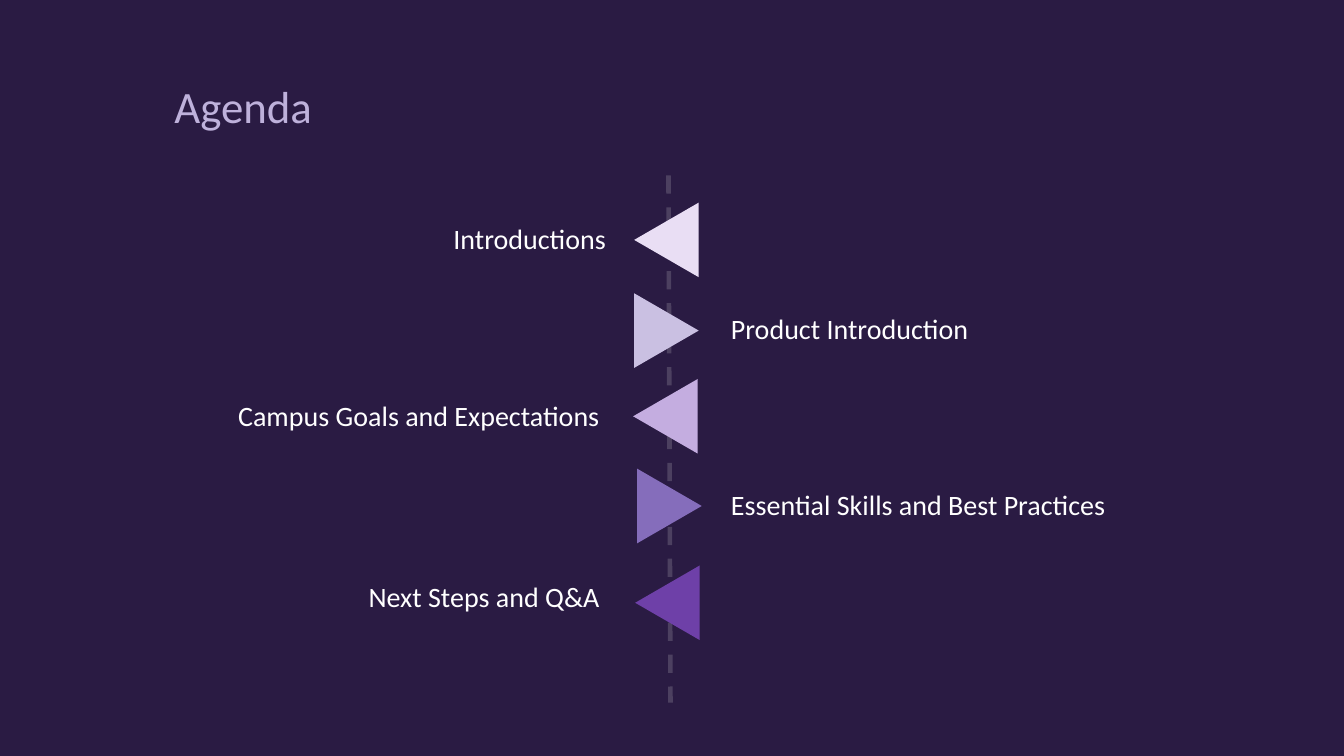
from lxml.etree import SubElement
from pptx import Presentation
from pptx.dml.color import RGBColor
from pptx.enum.dml import MSO_LINE
from pptx.enum.shapes import MSO_CONNECTOR, MSO_SHAPE
from pptx.enum.text import MSO_ANCHOR, MSO_AUTO_SIZE, PP_ALIGN
from pptx.oxml.ns import qn
from pptx.util import Inches, Pt

BACKGROUND = RGBColor(0x2A, 0x1B, 0x43)
LILAC = RGBColor(0xBE, 0xB1, 0xDB)
WHITE = RGBColor(0xFF, 0xFF, 0xFF)
GREY = RGBColor(0xD8, 0xD8, 0xD8)

TITLE_FORMAT = {"name": "Calibri", "size": Pt(32), "bold": False}
LABEL_FORMAT = {"name": "Calibri", "size": Pt(20), "bold": False}

LEFT_EDGE, RIGHT_EDGE = 6.01, 7.25  # inner edges of the two label columns
LABEL_H = 0.85
MARKER_W, MARKER_H = 0.74, 0.64

# Label, its top and width, marker left and top, marker colour
AGENDA = [
    ("Introductions", 1.96, 3.79, 6.24, 2.06, RGBColor(0xE9, 0xDE, 0xF4)),
    ("Product Introduction", 2.85, 4.67, 6.24, 2.96, RGBColor(0xCA, 0xC0, 0xE2)),
    ("Campus Goals and Expectations ", 3.72, 4.93, 6.23, 3.81, RGBColor(0xC4, 0xAD, 0xE0)),
    ("Essential Skills and Best Practices", 4.6, 4.35, 6.27, 4.7, RGBColor(0x85, 0x6D, 0xBB)),
    ("Next Steps and Q&A ", 5.51, 3.87, 6.25, 5.66, RGBColor(0x6E, 0x40, 0xA8)),
]


def write_text(sp, text, font_format, color, align):
    tf = sp.text_frame
    frame_format = {
        "word_wrap": True, "auto_size": MSO_AUTO_SIZE.NONE,
        "vertical_anchor": MSO_ANCHOR.MIDDLE,
        "margin_left": 0, "margin_right": 0, "margin_top": 0, "margin_bottom": 0,
    }
    for name, value in frame_format.items():
        setattr(tf, name, value)
    p = tf.paragraphs[0]
    p.alignment = align
    p.line_spacing = 0.9
    r = p.add_run()
    r.text = text
    for name, value in font_format.items():
        setattr(r.font, name, value)
    r.font.color.rgb = color


def add_title(slide, left, top, width, height):
    sp = slide.shapes.title
    sp.left, sp.top = Inches(left), Inches(top)
    sp.width, sp.height = Inches(width), Inches(height)
    write_text(sp, "Agenda", TITLE_FORMAT, LILAC, PP_ALIGN.LEFT)


def add_timeline(slide, x1, y1, x2, y2):
    line = slide.shapes.add_connector(
        MSO_CONNECTOR.STRAIGHT, Inches(x1), Inches(y1), Inches(x2), Inches(y2))
    line.line.width = Pt(3.25)
    line.line.color.rgb = GREY
    line.line.dash_style = MSO_LINE.DASH
    # Transparency and no shadow
    sp_pr = line._element.spPr
    color = sp_pr.find(".//" + qn("a:srgbClr"))
    SubElement(color, qn("a:alpha")).set("val", "20000")
    SubElement(sp_pr, qn("a:effectLst"))


def add_label(slide, text, left, top, width, align):
    sp = slide.shapes.add_textbox(
        Inches(left), Inches(top), Inches(width), Inches(LABEL_H))
    write_text(sp, text, LABEL_FORMAT, WHITE, align)


def add_marker(slide, left, top, rotation, color):
    sp = slide.shapes.add_shape(
        MSO_SHAPE.ISOSCELES_TRIANGLE, Inches(left), Inches(top),
        Inches(MARKER_W), Inches(MARKER_H))
    sp.shadow.inherit = False
    sp.rotation = rotation
    sp.fill.solid()
    sp.fill.fore_color.rgb = color
    sp.line.fill.background()


def add_agenda(slide):
    # Labels alternate left and right; each marker points to its label
    for i, (text, top, width, marker_left, marker_top, color) in enumerate(AGENDA):
        if i % 2 == 0:
            left, align, rotation = LEFT_EDGE - width, PP_ALIGN.RIGHT, 270
        else:
            left, align, rotation = RIGHT_EDGE, PP_ALIGN.LEFT, 90
        add_label(slide, text, left, top, width, align)
        add_marker(slide, marker_left, marker_top, rotation, color)


def main():
    prs = Presentation()
    prs.slide_width, prs.slide_height = Inches(13.33), Inches(7.5)
    slide = prs.slides.add_slide(prs.slide_layouts[5])
    slide.background.fill.solid()
    slide.background.fill.fore_color.rgb = BACKGROUND
    add_timeline(slide, 6.63, 1.74, 6.65, 6.97)
    add_title(slide, 1.73, 0.83, 9.83, 0.5)
    add_agenda(slide)
    prs.save("out.pptx")


if __name__ == "__main__":
    main()
